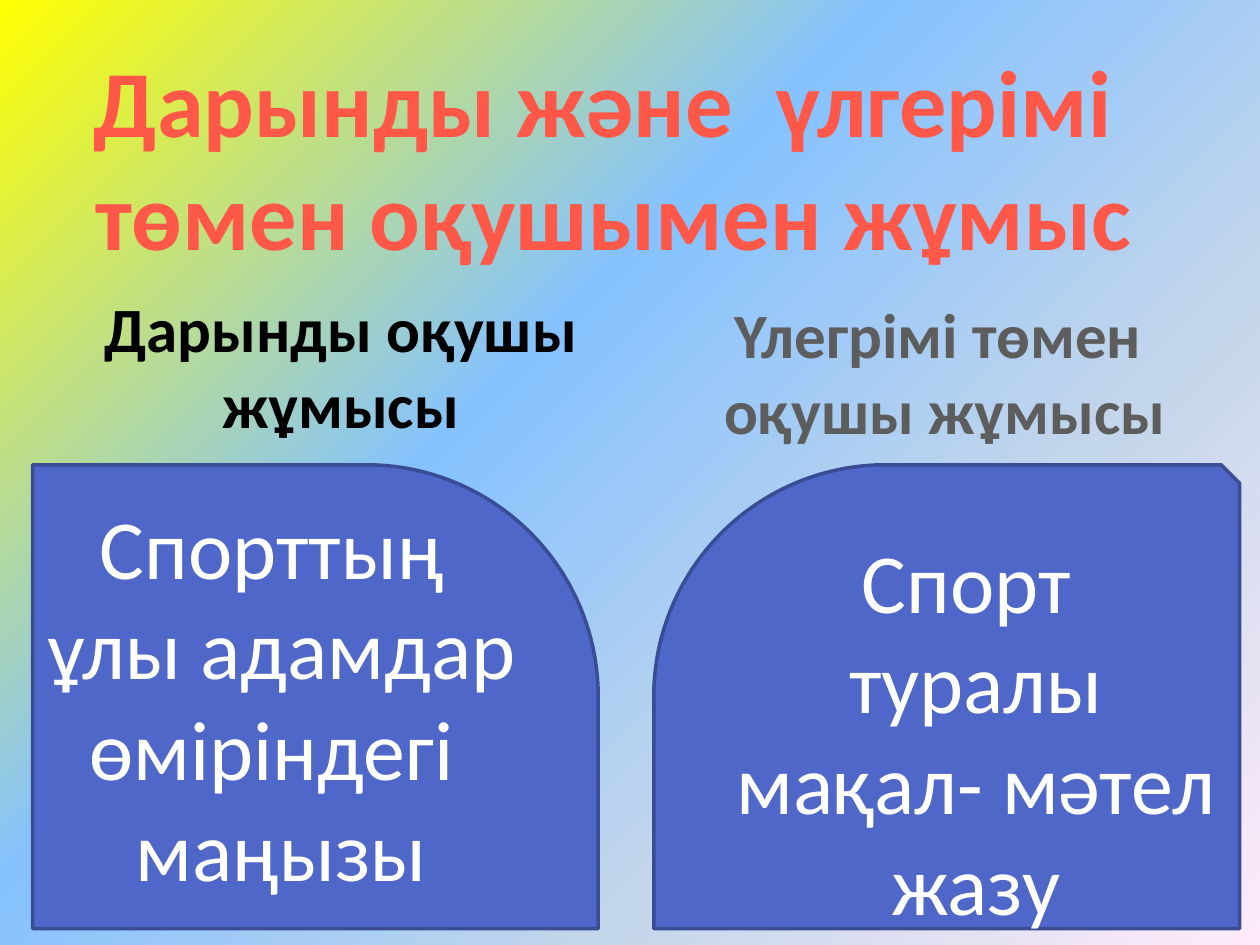
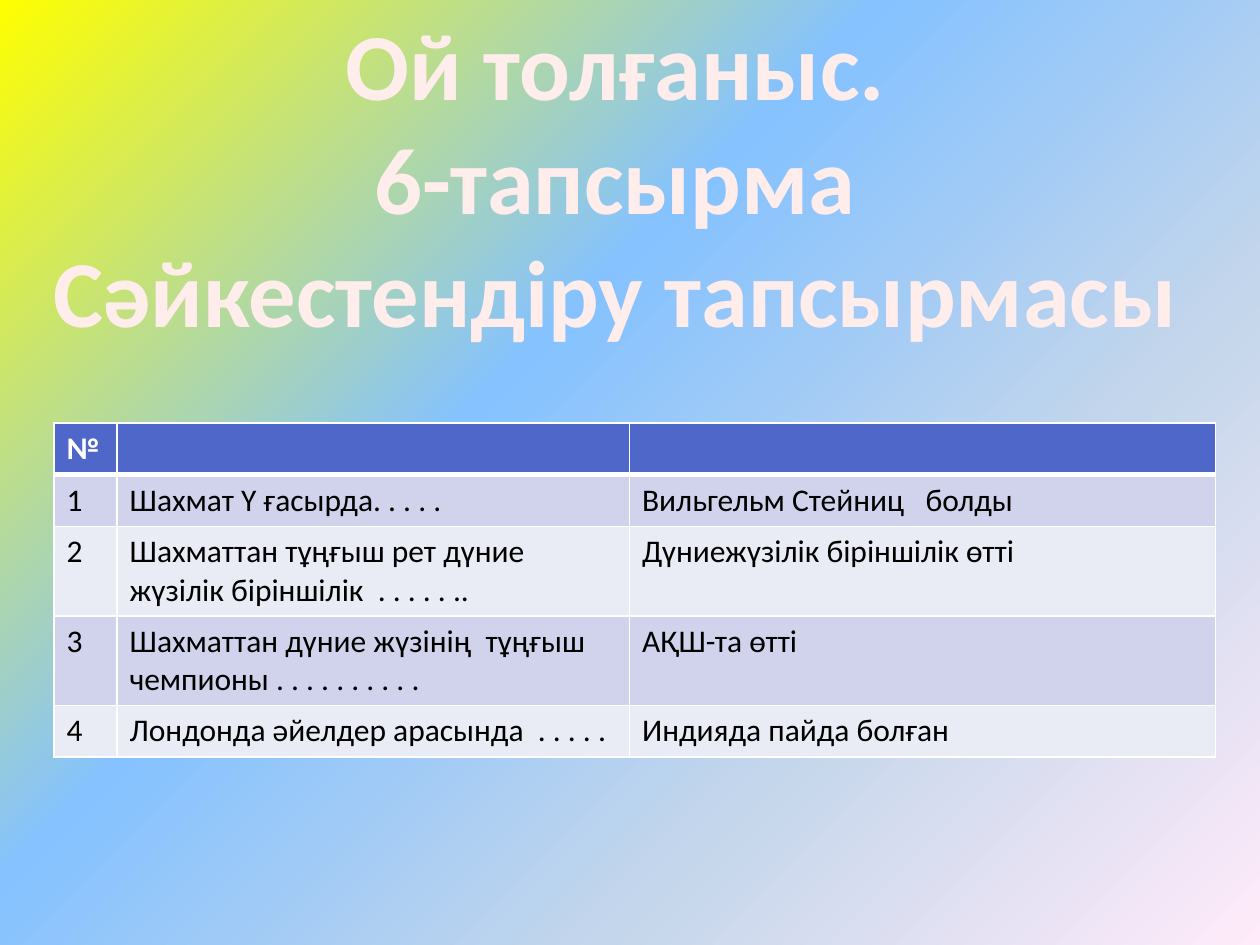
from lxml.etree import SubElement
from pptx import Presentation
from pptx.dml.color import RGBColor
from pptx.enum.shapes import MSO_SHAPE
from pptx.enum.text import MSO_ANCHOR, MSO_AUTO_SIZE, PP_ALIGN
from pptx.oxml.ns import qn
from pptx.util import Cm, Pt

WHITE = RGBColor(0xFF, 0xFF, 0xFF)
BLACK = RGBColor(0, 0, 0)
GREY = RGBColor(0x5D, 0x5D, 0x5D)
CORAL = RGBColor(0xFF, 0x57, 0x48)
BLUSH = RGBColor(0xFF, 0xED, 0xEC)
BLUE = RGBColor(0x4E, 0x67, 0xC8)
NAVY = RGBColor(0x3A, 0x4C, 0x94)
BANDS = [RGBColor(0xE9, 0xEB, 0xF5), RGBColor(0xD0, 0xD3, 0xEB)]
BACKDROP = [
    (0, RGBColor(0xFF, 0xFF, 0x00)),
    (40, RGBColor(0x85, 0xC2, 0xFF)),
    (70, RGBColor(0xC4, 0xD6, 0xEB)),
    (100, RGBColor(0xFF, 0xEB, 0xFA)),
]

TITLE = {"size": Pt(54), "bold": True}
HEADING = {"size": Pt(36), "bold": True}
PANEL = {"size": Pt(48), "bold": False}
CELL = {"size": Pt(18), "bold": False}

PANEL_TOP, PANEL_HEIGHT = 9.37, 9.35
ROW_HEIGHT = 1.04


class Deck:
    font = "Calibri"

    def __init__(self):
        self.prs = Presentation()
        self.prs.slide_width, self.prs.slide_height = Cm(25.4), Cm(19.05)
        self.s = None
        self.backdrop()

    def backdrop(self):
        master = self.prs.slide_master
        fill = master.background.fill
        fill.gradient()
        fill.gradient_angle = 315
        stops = master.element.find(".//" + qn("p:bg")).find(".//" + qn("a:gsLst"))
        for stop in list(stops):
            stops.remove(stop)
        for position, color in BACKDROP:
            stop = SubElement(stops, qn("a:gs"), pos=str(position * 1000))
            SubElement(stop, qn("a:srgbClr"), val=str(color))

    def text(self, tf, lines, style, color, align=PP_ALIGN.CENTER):
        for i, line in enumerate(lines):
            p = tf.paragraphs[0] if i == 0 else tf.add_paragraph()
            p.alignment = align
            r = p.add_run()
            r.text = line
            for name, value in {"name": self.font, **style}.items():
                setattr(r.font, name, value)
            r.font.color.rgb = color

    def frame(self, sp, lines, style, color, wrap=True, anchor=MSO_ANCHOR.TOP):
        tf = sp.text_frame
        settings = {"auto_size": MSO_AUTO_SIZE.NONE, "word_wrap": wrap, "vertical_anchor": anchor}
        for name, value in settings.items():
            setattr(tf, name, value)
        self.text(tf, lines, style, color)

    def slide(self, lines, color, box):
        self.s = self.prs.slides.add_slide(self.prs.slide_layouts[5])
        sp = self.s.shapes.title
        for name, value in zip(("left", "top", "width", "height"), box):
            setattr(sp, name, Cm(value))
        self.frame(sp, lines, TITLE, color, wrap=False)

    def heading(self, lines, color, box, wrap=True):
        sp = self.s.shapes.add_textbox(*map(Cm, box))
        self.frame(sp, lines, HEADING, color, wrap)

    def panel(self, kind, lines, left, width, adjustments):
        box = map(Cm, (left, PANEL_TOP, width, PANEL_HEIGHT))
        sp = self.s.shapes.add_shape(kind, *box)
        sp.shadow.inherit = False
        sp.fill.solid()
        sp.fill.fore_color.rgb = BLUE
        sp.line.color.rgb = NAVY
        sp.line.width = Pt(2)
        for i, value in enumerate(adjustments):
            sp.adjustments[i] = value
        self.frame(sp, lines, PANEL, WHITE, anchor=MSO_ANCHOR.MIDDLE)

    def borders(self, cell, widths):
        tcPr = cell._tc.get_or_add_tcPr()
        for side, width in widths.items():
            ln = SubElement(tcPr, qn("a:ln" + side), w=str(Pt(width)))
            fill = SubElement(ln, qn("a:solidFill"))
            SubElement(fill, qn("a:srgbClr"), val=str(WHITE))

    def table(self, rows, left, top, widths):
        size = map(Cm, (left, top, sum(widths), ROW_HEIGHT * len(rows)))
        table = self.s.shapes.add_table(len(rows), len(widths), *size).table
        for column, width in zip(table.columns, widths):
            column.width = Cm(width)
        for i, row in enumerate(rows):
            header = i == 0
            table.rows[i].height = Cm(ROW_HEIGHT)
            for j, text in enumerate(row):
                cell = table.cell(i, j)
                self.borders(cell, {"L": 1, "R": 1, "T": 3 if i == 1 else 1, "B": 3 if header else 1})
                cell.fill.solid()
                cell.fill.fore_color.rgb = BLUE if header else BANDS[i % 2]
                if text:
                    style = {**CELL, "bold": header}
                    self.text(cell.text_frame, [text], style, WHITE if header else BLACK, PP_ALIGN.LEFT)


def main():
    deck = Deck()

    deck.slide(["Дарынды және  үлгерімі ", "төмен оқушымен жұмыс"], CORAL, (1.5, 0.74, 21.74, 4.88))
    deck.heading(["Дарынды оқушы жұмысы"], BLACK, (1.37, 5.72, 11, 3.33))
    deck.panel(MSO_SHAPE.ROUND_1_RECTANGLE, ["Спорттың  ұлы адамдар өміріндегі  маңызы"],
               0.66, 11.4, [0.5])
    deck.heading(["Үлегрімі төмен ", "оқушы жұмысы"], GREY, (14.3, 5.84, 9.5, 3.33), wrap=False)
    deck.panel(MSO_SHAPE.SNIP_ROUND_RECTANGLE, ["Спорт ", "туралы мақал- мәтел жазу"],
               13.18, 11.81, [0.5, 0.04])

    deck.slide(["Ой толғаныс.", "6-тапсырма", "Сәйкестендіру тапсырмасы"], BLUSH, (0.71, 0, 23.39, 7.19))
    pairs = [
        ("Шахмат Ү ғасырда. . . . .", "Вильгельм Стейниц   болды"),
        ("Шахматтан тұңғыш рет дүние жүзілік біріншілік  . . . . . ..", "Дүниежүзілік біріншілік өтті"),
        ("Шахматтан дүние жүзінің  тұңғыш  чемпионы . . . . . . . . . .", "АҚШ-та өтті"),
        ("Лондонда әйелдер арасында  . . . . .", "Индияда пайда болған"),
    ]
    rows = [("№", "", "")] + [(str(n), *pair) for n, pair in enumerate(pairs, 1)]
    deck.table(rows, 1.09, 8.53, [1.27, 10.33, 11.81])

    deck.prs.save("out.pptx")


if __name__ == "__main__":
    main()
